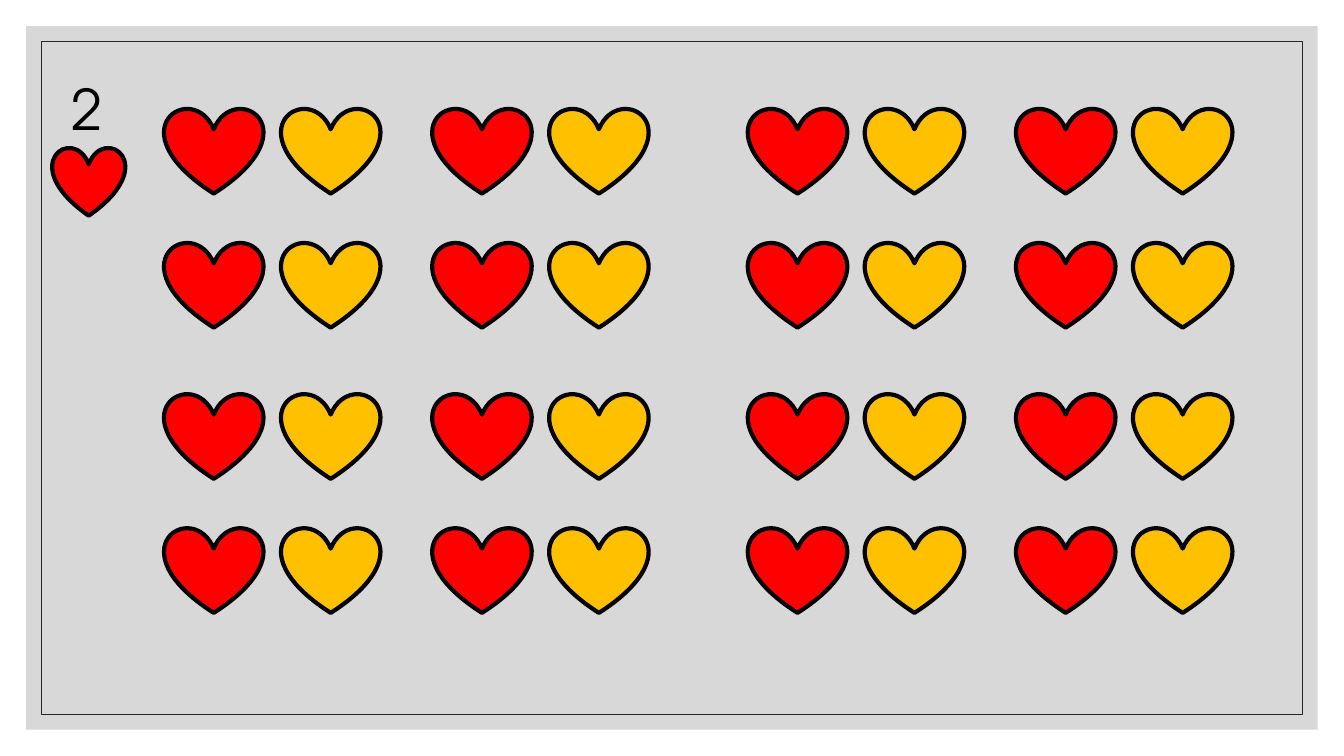
from itertools import product

from lxml import etree
from pptx import Presentation
from pptx.dml.color import RGBColor
from pptx.enum.shapes import MSO_SHAPE
from pptx.enum.text import MSO_AUTO_SIZE, PP_ALIGN
from pptx.oxml.ns import qn
from pptx.util import Inches, Pt

RECT, HEART = MSO_SHAPE.RECTANGLE, MSO_SHAPE.HEART
CENTER = PP_ALIGN.CENTER
GROW = MSO_AUTO_SIZE.SHAPE_TO_FIT_TEXT

RED = RGBColor(0xFF, 0x00, 0x00)
GOLD = RGBColor(0xFF, 0xC0, 0x00)
BLACK = RGBColor(0x00, 0x00, 0x00)
GREY = RGBColor(0xBF, 0xBF, 0xBF)
DARK = RGBColor(0x26, 0x26, 0x26)
FONT = "TeX Gyre Adventor"

SLIDE_W, SLIDE_H = 13.33, 7.5
GRID_LEFT, GRID_TOP = 1.63, 1.07
HALF_STEP, PAIR_STEP, HEART_STEP = 5.79, 2.66, 1.16
BLOCK_STEP, ROW_STEP = 2.83, 1.33
HEART_W, HEART_H = 0.98, 0.85


def add_shape(s, kind, x, y, w, h, fill=None, line=None, weight=0):
    sp = s.shapes.add_shape(kind, Inches(x), Inches(y), Inches(w), Inches(h))
    sp.shadow.inherit = False
    if fill is None:
        sp.fill.background()
    else:
        sp.fill.solid()
        sp.fill.fore_color.rgb = fill
    if line is None:
        sp.line.fill.background()
    else:
        sp.line.color.rgb = line
        sp.line.width = Pt(weight)
    return sp


def add_panel(s, margin, **style):
    """Rectangle set in from every slide edge by the same margin."""
    return add_shape(s, RECT, margin, margin,
                     SLIDE_W - 2 * margin, SLIDE_H - 2 * margin, **style)


def set_opacity(sp, percent):
    color = sp.fill._xPr.find(qn("a:solidFill"))[0]
    etree.SubElement(color, qn("a:alpha")).set("val", str(percent * 1000))


def add_heart(s, x, y, w, h, color):
    add_shape(s, HEART, x, y, w, h, fill=color, line=BLACK, weight=3)


def add_heart_grid(s):
    """Four blocks, each two rows of two red-and-gold pairs."""
    for block, row, half, pair in product(range(2), repeat=4):
        x = GRID_LEFT + half * HALF_STEP + pair * PAIR_STEP
        y = GRID_TOP + block * BLOCK_STEP + row * ROW_STEP
        for i, color in enumerate((RED, GOLD)):
            add_heart(s, x + i * HEART_STEP, y, HEART_W, HEART_H, color)


def add_number(s, text, x, y, w, h):
    tf = s.shapes.add_textbox(Inches(x), Inches(y), Inches(w), Inches(h)).text_frame
    tf.word_wrap = True
    tf.auto_size = GROW
    p = tf.paragraphs[0]
    p.text = text
    p.alignment = CENTER
    p.font.name = FONT
    p.font.size = Pt(40)
    p.font.color.rgb = BLACK


def main():
    prs = Presentation()
    prs.slide_width, prs.slide_height = Inches(SLIDE_W), Inches(SLIDE_H)
    s = prs.slides.add_slide(prs.slide_layouts[6])
    set_opacity(add_panel(s, 0.26, fill=GREY), 60)
    add_panel(s, 0.41, line=DARK, weight=0.5)
    add_heart_grid(s)
    add_number(s, "2", 0.45, 0.69, 0.82, 0.77)
    add_heart(s, 0.52, 1.46, 0.72, 0.68, RED)
    prs.save("out.pptx")


if __name__ == "__main__":
    main()
